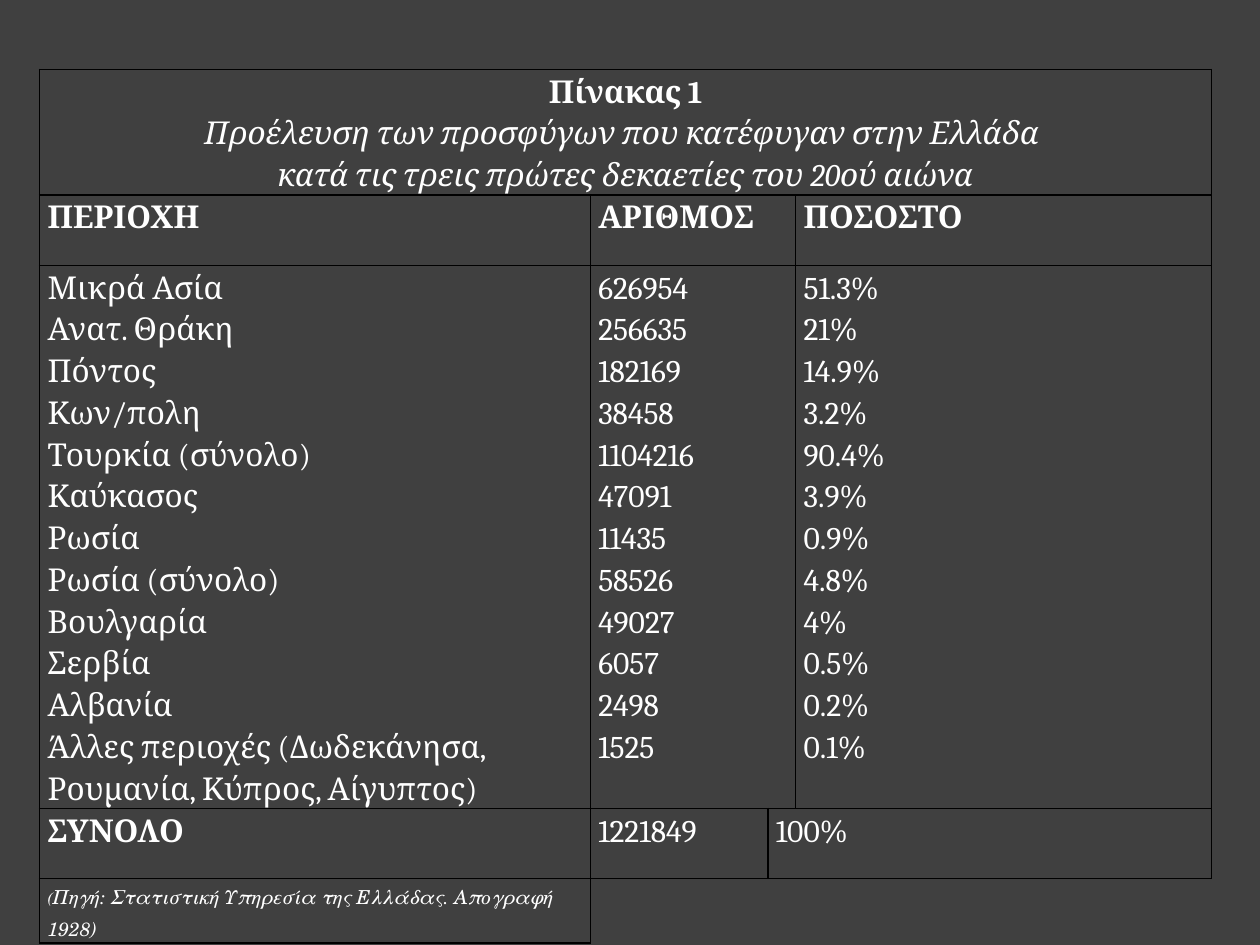
from dataclasses import dataclass

from lxml import etree
from pptx import Presentation
from pptx.dml.color import RGBColor
from pptx.enum.text import PP_ALIGN
from pptx.oxml.ns import qn
from pptx.util import Cm, Pt

CENTER, LEFT = PP_ALIGN.CENTER, PP_ALIGN.LEFT
SIDES = ("L", "R", "T", "B")


@dataclass(frozen=True)
class Theme:
    back: str = "404040"
    text: str = "FFFFFF"
    rule: str = "000000"
    rule_width: float = 1
    body_font: str = "Cambria"
    source_font: str = "TeX Gyre Schola"
    body: int = 18
    source: int = 11
    bracket: int = 9


class Deck:
    """Holds the theme and the current slide, and draws elements on it."""

    def __init__(self, prs, theme):
        self.theme = theme
        self.s = prs.slides.add_slide(prs.slide_layouts[6])
        fill = self.s.background.fill
        fill.solid()
        fill.fore_color.rgb = RGBColor.from_string(theme.back)

    def table(self, left, top, cols, rows):
        frame = self.s.shapes.add_table(
            len(rows), len(cols), Cm(left), Cm(top), Cm(sum(cols)), Cm(sum(rows)))
        tbl = frame.table
        tbl.first_row = tbl.horz_banding = False
        for col, width in zip(tbl.columns, cols):
            col.width = Cm(width)
        for row, height in zip(tbl.rows, rows):
            row.height = Cm(height)
        return tbl

    def borders(self, cell, sides):
        cell.fill.background()
        tc_pr = cell._tc.get_or_add_tcPr()
        for i, side in enumerate(SIDES):
            ln = etree.Element(qn(f"a:ln{side}"), w=str(Pt(self.theme.rule_width)))
            if side in sides:
                fill = etree.SubElement(ln, qn("a:solidFill"))
                etree.SubElement(fill, qn("a:srgbClr"), val=self.theme.rule)
            else:
                etree.SubElement(ln, qn("a:noFill"))
            tc_pr.insert(i, ln)

    def text(self, cell, runs, align=LEFT):
        margins = {"margin_left": Cm(0.16), "margin_right": Cm(0.16),
                   "margin_top": 0, "margin_bottom": 0}
        for name, value in margins.items():
            setattr(cell, name, value)
        p = cell.text_frame.paragraphs[0]
        for name, value in {"alignment": align, "line_spacing": 1.15,
                            "space_after": Pt(10)}.items():
            setattr(p, name, value)
        for words, style in runs:
            for i, line in enumerate(words.split("\n")):
                if i:
                    p.add_line_break()
                if line:
                    self.run(p, line, style)
        for br in p._p.findall(qn("a:br")):
            size = str(self.theme.body * 100)
            etree.SubElement(br, qn("a:rPr"), sz=size)

    def run(self, p, line, style):
        r = p.add_run()
        r.text = line
        base = {"name": self.theme.body_font, "size": Pt(self.theme.body),
                "bold": False, "italic": False}
        for name, value in {**base, **style}.items():
            setattr(r.font, name, value)
        r.font.color.rgb = RGBColor.from_string(self.theme.text)


REGIONS = [
    ("Μικρά Ασία", "626954", "51.3%"),
    ("Ανατ. Θράκη", "256635", "21%"),
    ("Πόντος", "182169", "14.9%"),
    ("Κων/πολη", "38458", "3.2%"),
    ("Τουρκία (σύνολο)", "1104216", "90.4%"),
    ("Καύκασος", "47091", "3.9%"),
    ("Ρωσία", "11435", "0.9%"),
    ("Ρωσία (σύνολο)", "58526", "4.8%"),
    ("Βουλγαρία", "49027", "4%"),
    ("Σερβία", "6057", "0.5%"),
    ("Αλβανία", "2498", "0.2%"),
    ("Άλλες περιοχές (Δωδεκάνησα,\nΡουμανία, Κύπρος, Αίγυπτος)", "1525", "0.1%"),
]
SPANS = [(0, 0, 3), (1, 1, 2), (2, 1, 2), (3, 2, 3), (4, 1, 3)]


def main():
    prs = Presentation()
    prs.slide_width, prs.slide_height = Cm(25.4), Cm(19.05)
    theme = Theme()
    deck = Deck(prs, theme)
    tbl = deck.table(0.8, 1.4, [11.1, 3.58, 0.56, 8.38],
                     [2.13, 1.42, 10.69, 1.42, 1.17])

    for row in range(5):
        for col in range(4):
            sides = SIDES if row < 4 or col == 0 else "LT" if col == 1 else "T"
            deck.borders(tbl.cell(row, col), sides)
    for row, first, last in SPANS:
        tbl.cell(row, first).merge(tbl.cell(row, last))

    bold, italic = {"bold": True}, {"italic": True}
    deck.text(tbl.cell(0, 0), [
        ("Πίνακας 1\n", bold),
        ("Προέλευση των προσφύγων που κατέφυγαν στην Ελλάδα \n"
         "κατά τις τρεις πρώτες δεκαετίες του 20ού αιώνα", italic)], CENTER)

    headings = ["ΠΕΡΙΟΧΗ", "ΑΡΙΘΜΟΣ", "ΠΟΣΟΣΤΟ"]
    for col, heading, values in zip((0, 1, 3), headings, zip(*REGIONS)):
        deck.text(tbl.cell(1, col), [(heading, bold)])
        deck.text(tbl.cell(2, col), [("\n".join(values), {})])

    totals = [("ΣΥΝΟΛΟ", bold), ("1221849", {}), ("100%", {})]
    for col, total in enumerate(totals):
        deck.text(tbl.cell(3, col), [total])

    source = {"name": theme.source_font, "size": Pt(theme.source), "italic": True}
    deck.text(tbl.cell(4, 0), [
        ("(", {**source, "size": Pt(theme.bracket)}),
        ("Πηγή: Στατιστική Υπηρεσία της Ελλάδας. Απογραφή 1928)", source)])
    prs.save("out.pptx")


if __name__ == "__main__":
    main()
